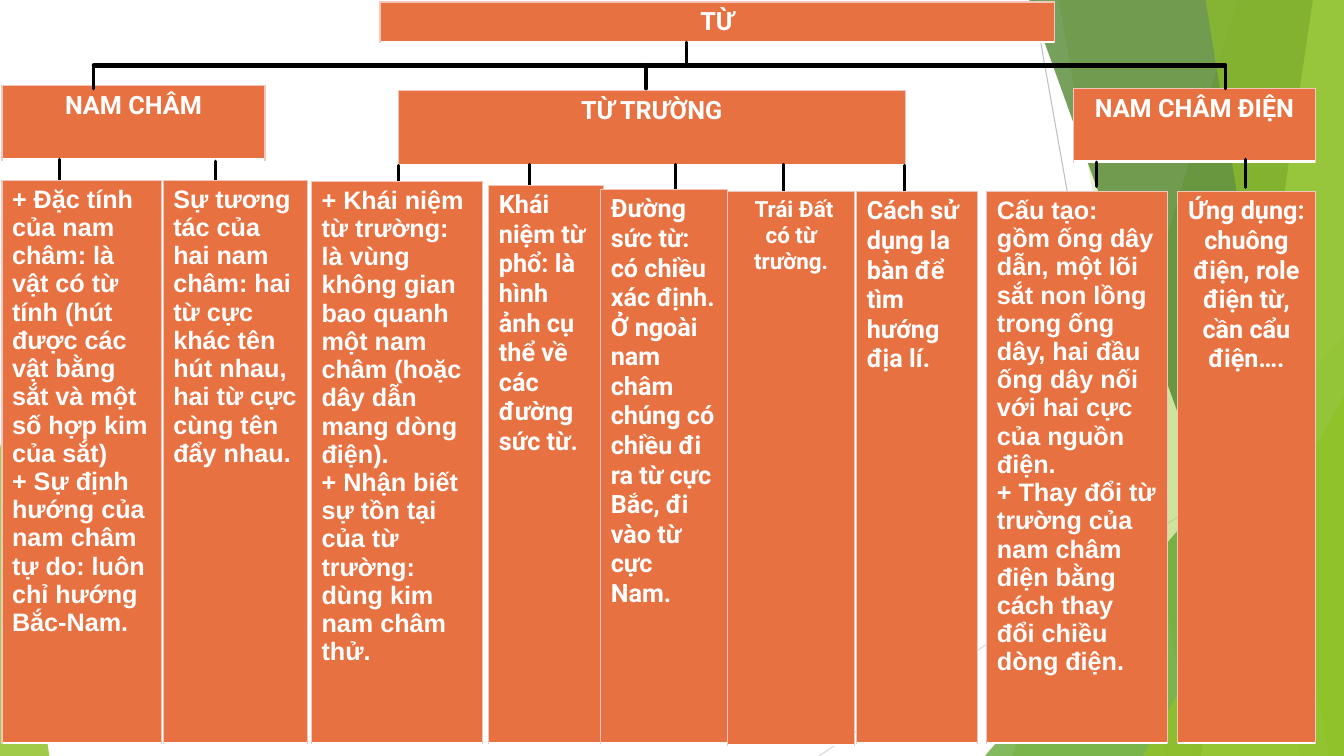
from dataclasses import dataclass

from lxml import etree
from pptx import Presentation
from pptx.dml.color import RGBColor
from pptx.enum import shapes, text
from pptx.oxml import ns
from pptx.util import Pt


@dataclass(frozen=True)
class Theme:
    """Colours, fonts and type sizes of the slide."""
    box: str = "E87142"
    border: str = "F3C6BD"
    white: str = "FFFFFF"
    black: str = "000000"
    lime: str = "90C226"
    green: str = "54A021"
    forest: str = "3F7819"
    pale: str = "C0E474"
    body: int = 18
    small: int = 16
    roboto: str = "Roboto"
    arial: str = "Arial"
    times: str = "Times New Roman"


THEME = Theme()
WIDTH, HEIGHT = 960, 540
BAR_Y = 46.8
LEFT, CENTER = text.PP_ALIGN.LEFT, text.PP_ALIGN.CENTER

HEADINGS = [
    ("TỪ", 271.4, 1.4, 481.7, 28.8),
    ("NAM CHÂM", 1.4, 61.2, 187.9, 52.6),
    ("TỪ TRƯỜNG", 284.4, 64.8, 362.2, 53.3),
    ("NAM CHÂM ĐIỆN", 766.8, 63.4, 172.8, 51.8),
]

DETAILS = [
    (1.4, 128.9, 113.8, 401.8, THEME.arial, LEFT, [
        "+ Đặc tính của nam châm: là vật có từ tính (hút được các vật bằng sắt "
        "và một số hợp kim của sắt)",
        "+ Sự định hướng của nam châm tự do: luôn chỉ hướng Bắc-Nam."]),
    (116.6, 128.9, 103, 401.8, THEME.arial, LEFT, [
        "Sự tương tác của hai nam châm: hai từ cực khác tên hút nhau, "
        "hai từ cực cùng tên đẩy nhau."]),
    (222.5, 129.6, 122.4, 401, THEME.arial, LEFT, [
        "+ Khái niệm từ trường: là vùng không gian bao quanh một nam châm "
        "(hoặc dây dẫn mang dòng điện).",
        "+ Nhận biết sự tồn tại của từ trường: dùng kim nam châm thử."]),
    (349.2, 132.5, 82.1, 398.2, THEME.roboto, LEFT, [
        "Khái niệm từ phổ: là hình ảnh cụ thể về các đường sức từ."]),
    (429.1, 135.4, 90.7, 395.3, THEME.roboto, LEFT, [
        "Đường sức từ: có chiều xác định. Ở ngoài nam châm chúng có chiều đi "
        "ra từ cực Bắc, đi vào từ cực Nam."]),
    (612, 136.8, 86.4, 393.8, THEME.roboto, LEFT, [
        "Cách sử dụng la bàn để tìm hướng địa lí."]),
    (704.9, 136.8, 128.9, 393.8, THEME.arial, LEFT, [
        "Cấu tạo: gồm ống dây dẫn, một lõi sắt non lồng trong ống dây, "
        "hai đầu ống dây nối với hai cực của nguồn điện.",
        "+ Thay đổi từ trường của nam châm điện bằng cách thay đổi chiều dòng điện."]),
    (841, 136.8, 98.6, 393.8, THEME.roboto, CENTER, [
        "Ứng dụng: chuông điện, role điện từ, cần cẩu điện…."]),
]

STEMS = [
    (490.3, 30.2, BAR_Y), (67, BAR_Y, 63.4), (461.5, 46.1, 63.4), (875.2, 46.1, 63.4),
    (42.5, 113.8, 128.9), (154.1, 115.2, 132.5), (284.4, 118.1, 133.2),
    (378, 117.4, 132.5), (482.4, 117.4, 135.4), (559.4, 117.4, 137.5),
    (645.8, 118.1, 138.2), (783.4, 115.9, 133.2), (889.9, 113.8, 133.9),
]


def paint(shape, color, opacity):
    """Fill a shape with a see-through colour and no outline."""
    shape.shadow.inherit = False
    shape.line.fill.background()
    shape.fill.solid()
    shape.fill.fore_color.rgb = RGBColor.from_string(color)
    tint = shape.fill._xPr.find(".//" + ns.qn("a:srgbClr"))
    etree.SubElement(tint, ns.qn("a:alpha"), val=str(opacity * 1000))


def add_facet(page, top_x, bottom_x, color, opacity):
    """Draw a slanted panel that reaches the right edge."""
    builder = page.shapes.build_freeform(Pt(top_x), Pt(-0.7), scale=1)
    corners = [(WIDTH, -0.7), (WIDTH, HEIGHT), (bottom_x, HEIGHT)]
    builder.add_line_segments([(Pt(x), Pt(y)) for x, y in corners], close=True)
    paint(builder.convert_to_shape(), color, opacity)


def add_triangle(page, left, top, width, apex, color, opacity):
    """Draw a triangle standing on the bottom edge."""
    shape = page.shapes.add_shape(shapes.MSO_SHAPE.ISOSCELES_TRIANGLE,
                                  Pt(left), Pt(top), Pt(width), Pt(HEIGHT - top))
    shape.adjustments[0] = apex
    paint(shape, color, opacity)


def add_line(page, start, end, color=THEME.black, weight=2.25):
    """Draw a straight round-capped line."""
    line = page.shapes.add_connector(shapes.MSO_CONNECTOR.STRAIGHT,
                                     *(Pt(value) for value in (*start, *end)))
    line.line.color.rgb = RGBColor.from_string(color)
    line.line.width = Pt(weight)
    line.line._get_or_add_ln().set("cap", "rnd")
    etree.SubElement(line._element.spPr, ns.qn("a:effectLst"))


def add_border(cell, side, color, weight):
    """Set one border of a cell."""
    edge = etree.SubElement(cell._tc.get_or_add_tcPr(), ns.qn("a:ln" + side),
                            w=str(Pt(weight)))
    fill = etree.SubElement(edge, ns.qn("a:solidFill"))
    etree.SubElement(fill, ns.qn("a:srgbClr"), val=color)


def add_box(page, left, top, width, height):
    """Add a one-cell table and return its cell."""
    table = page.shapes.add_table(1, 1, Pt(left), Pt(top), Pt(width), Pt(height)).table
    table.first_row = table.horz_banding = False
    cell = table.cell(0, 0)
    for side in "LRT":
        add_border(cell, side, THEME.border, 1)
    add_border(cell, "B", THEME.white, 2)
    cell.fill.solid()
    cell.fill.fore_color.rgb = RGBColor.from_string(THEME.box)
    return cell


def add_span(para, words, font, size=THEME.body):
    """Add a bold white run."""
    span = para.add_run()
    span.text = words
    span.font.name = font
    span.font.size = Pt(size)
    span.font.bold = True
    span.font.color.rgb = RGBColor.from_string(THEME.white)


def add_text(cell, paragraphs, font, align):
    """Write paragraphs into a cell."""
    frame = cell.text_frame
    for index, words in enumerate(paragraphs):
        para = frame.add_paragraph() if index else frame.paragraphs[0]
        para.alignment = align
        add_span(para, words, font)


def add_earth_box(page):
    """Add the smaller-type box about the Earth's field."""
    para = add_box(page, 519.8, 136.8, 90.7, 395.3).text_frame.paragraphs[0]
    para.alignment = CENTER
    add_span(para, " ", THEME.times, THEME.small)
    add_span(para, "Trái Đất có từ trường.", THEME.roboto, THEME.small)


def add_backdrop(page):
    """Draw the green facets behind the diagram."""
    add_line(page, (738, 0), (834, HEIGHT), "BFBFBF", 0.75)
    add_line(page, (WIDTH, 290), (585, HEIGHT), "D9D9D9", 0.75)
    add_facet(page, 884, 723, THEME.lime, 30)
    add_facet(page, 756, 852, THEME.lime, 20)
    add_triangle(page, 703.5, 240, 256.5, 1, THEME.green, 72)
    add_facet(page, 735, 929.5, THEME.forest, 70)
    add_facet(page, 938, 858, THEME.pale, 70)
    add_facet(page, 861, 949, THEME.lime, 65)
    add_triangle(page, 816.5, 283, 143.5, 1, THEME.lime, 80)
    add_triangle(page, 0, 316, 35.3, 0, THEME.lime, 85)


def main():
    """Build the magnetism concept map."""
    deck = Presentation()
    deck.slide_width, deck.slide_height = Pt(WIDTH), Pt(HEIGHT)
    page = deck.slides.add_slide(deck.slide_layouts[6])
    add_backdrop(page)
    for title, *area in HEADINGS:
        add_text(add_box(page, *area), [title], THEME.roboto, CENTER)
    add_line(page, (67, BAR_Y), (875, BAR_Y), weight=3)
    for x, top, bottom in STEMS:
        add_line(page, (x, top), (x, bottom))
    for *area, font, align, paragraphs in DETAILS:
        add_text(add_box(page, *area), paragraphs, font, align)
    add_earth_box(page)
    deck.save("out.pptx")


if __name__ == "__main__":
    main()
